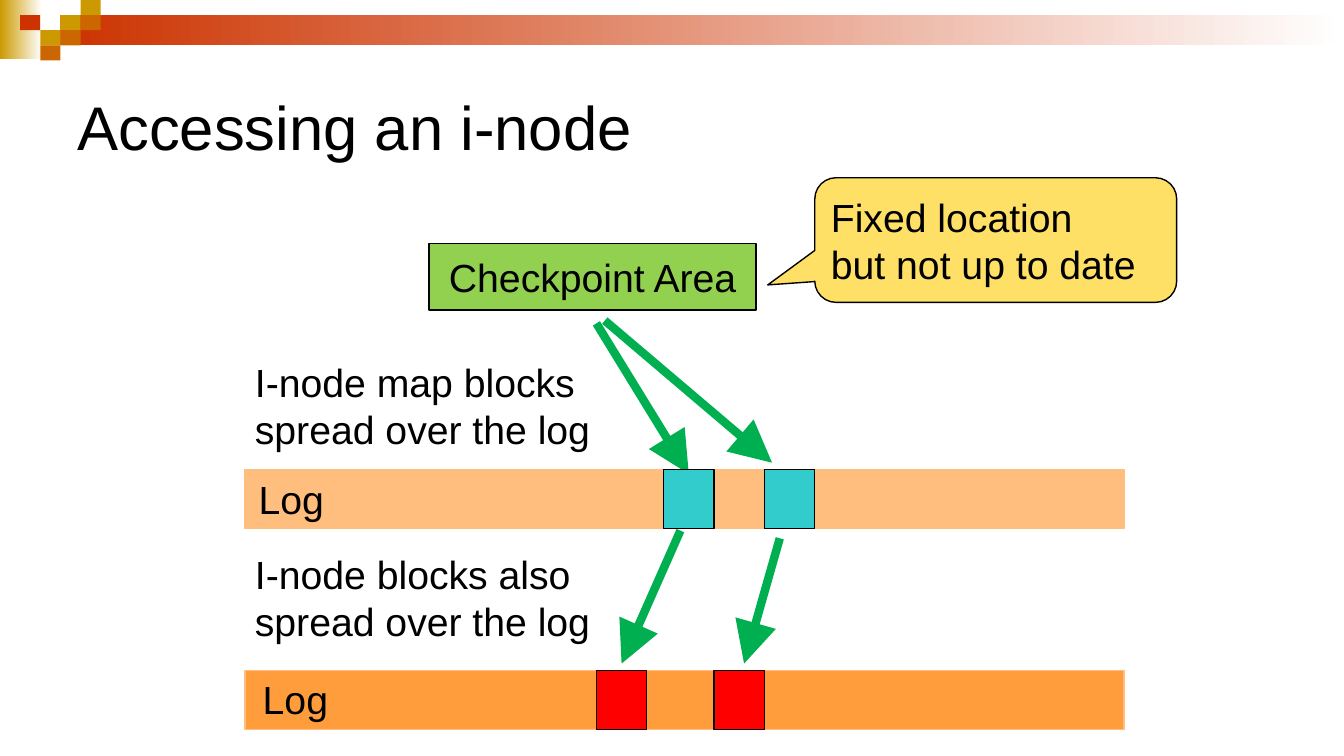
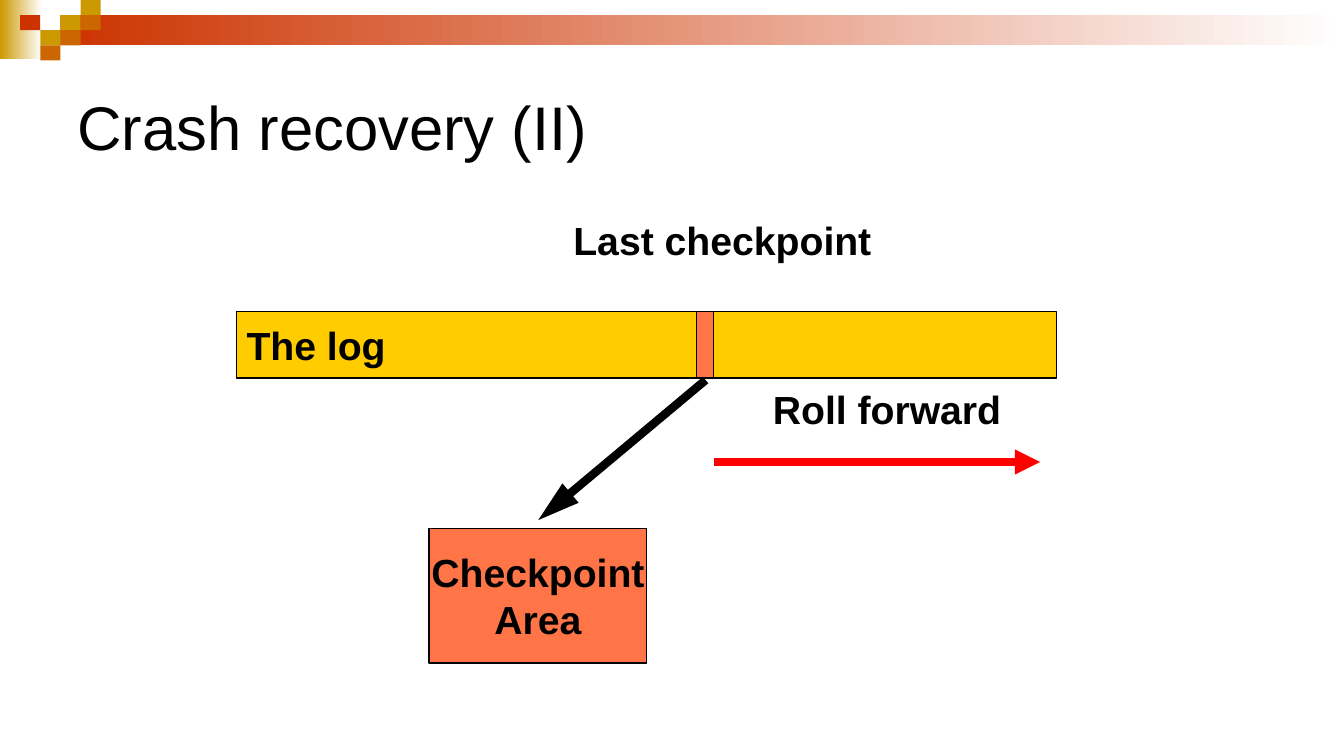
"""Build two slides on log-structured file systems."""
import dataclasses
import typing

import lxml.etree
import pptx
import pptx.dml.color
import pptx.dml.fill
import pptx.enum.shapes
import pptx.enum.text
import pptx.oxml.ns
import pptx.presentation
import pptx.shapes.autoshape
import pptx.slide
import pptx.text.text
import pptx.util

Pt = pptx.util.Pt
Kind = pptx.enum.shapes.MSO_SHAPE
Align = pptx.enum.text.PP_ALIGN
qn = pptx.oxml.ns.qn

FONT = "Arial"
HUES = {
    "black": "000000", "white": "FFFFFF", "gold": "CC9900", "rust": "CC3300",
    "brown": "CC6600", "cream": "FFE066", "peach": "FFBE7D", "orange": "FF9D3C",
    "red": "FF0000", "green": "00B050", "lime": "92D050", "teal": "33CCCC",
    "amber": "FFCC00", "coral": "FF7547",
}
CELL_W, CELL_H = 14.4, 10.8
BAR_X, BAR_W, BAR_H = 175, 628, 42
MAP_Y, NODE_Y = 335.5, 479
SIDE = 36


@dataclasses.dataclass(frozen=True)
class Box:
    """A shape or, without a fill, a text box."""
    x: float
    y: float
    w: float
    h: float
    text: str = ""
    fill: str = ""
    edge: str = "black"
    fade: str = ""
    bold: bool = False
    mid: bool = False
    kind: Kind = Kind.RECTANGLE
    bend: tuple[float, ...] = ()


@dataclasses.dataclass(frozen=True)
class Arrow:
    """A straight arrow with its head at the second point."""
    x1: float
    y1: float
    x2: float
    y2: float
    hue: str
    wide: str = "med"
    long: str = "med"


class Page(typing.NamedTuple):
    """A title and the items below it, from back to front."""
    title: str
    items: list[Box | Arrow]


def tint(name: str) -> pptx.dml.color.RGBColor:
    """Return the named colour."""
    return pptx.dml.color.RGBColor.from_string(HUES[name])


def write(frame: pptx.text.text.TextFrame, text: str, size: float,
          bold: bool = False, mid: bool = False) -> None:
    """Write paragraphs split at newlines and line breaks at vertical tabs."""
    frame.word_wrap = True
    frame.auto_size = pptx.enum.text.MSO_AUTO_SIZE.NONE
    frame.vertical_anchor = pptx.enum.text.MSO_ANCHOR.MIDDLE
    frame.margin_left = Pt(0 if mid else 7.2)
    frame.margin_right = Pt(0)
    for row, line in enumerate(text.split("\n")):
        para = frame.add_paragraph() if row else frame.paragraphs[0]
        para.alignment = Align.CENTER if mid else Align.LEFT
        for turn, words in enumerate(line.split("\v")):
            if turn:
                para.add_line_break()
            run = para.add_run()
            run.text = words
            run.font.name, run.font.size = FONT, Pt(size)
            run.font.bold = bold
            run.font.color.rgb = tint("black")


def paint(fill: pptx.dml.fill.FillFormat, hue: str, fade: str) -> None:
    """Fill with one colour or a left to right fade."""
    if not fade:
        fill.solid()
        fill.fore_color.rgb = tint(hue)
        return
    fill.gradient()
    fill.gradient_angle = 0
    for stop, name in zip(fill.gradient_stops, (hue, fade)):
        stop.color.rgb = tint(name)


def draw_box(slide: pptx.slide.Slide, box: Box) -> pptx.shapes.autoshape.Shape:
    """Draw one box with its text."""
    place = [Pt(v) for v in (box.x, box.y, box.w, box.h)]
    if box.fill:
        shape = slide.shapes.add_shape(box.kind, *place)
        shape.shadow.inherit = False
        paint(shape.fill, box.fill, box.fade)
        if box.edge:
            shape.line.color.rgb = tint(box.edge)
            shape.line.width = Pt(1)
        else:
            shape.line.fill.background()
        for spot, value in enumerate(box.bend):
            shape.adjustments[spot] = value
    else:
        shape = slide.shapes.add_textbox(*place)
    if box.text:
        write(shape.text_frame, box.text, 28, box.bold, box.mid)
    return shape


def draw_arrow(slide: pptx.slide.Slide, arrow: Arrow) -> None:
    """Draw one arrow."""
    ends = [Pt(v) for v in (arrow.x1, arrow.y1, arrow.x2, arrow.y2)]
    wire = slide.shapes.add_connector(
        pptx.enum.shapes.MSO_CONNECTOR.STRAIGHT, *ends)
    wire.line.color.rgb = tint(arrow.hue)
    wire.line.width = Pt(6)
    props = wire.element.spPr
    lxml.etree.SubElement(props.find(qn("a:ln")), qn("a:tailEnd"),
                          type="triangle", w=arrow.wide, len=arrow.long)
    lxml.etree.SubElement(props, qn("a:effectLst"))


def add_band(deck: pptx.presentation.Presentation,
             slide: pptx.slide.Slide) -> None:
    """Draw the top band and move it to the master."""
    cells = [(3, 1, "gold"), (4, 0, "gold"), (4, 1, "brown"), (2, 2, "gold"),
             (1, 1, "rust"), (3, 2, "brown"), (2, 3, "brown")]
    band = [
        Box(0, 0, 30, 42, fill="gold", edge="", fade="white"),
        Box(3 * CELL_W, CELL_H, 960 - 3 * CELL_W, 2 * CELL_H,
            fill="rust", edge="", fade="white"),
    ]
    band += [Box(col * CELL_W, row * CELL_H, CELL_W, CELL_H, fill=hue, edge="")
             for col, row, hue in cells]
    tree = deck.slide_master.shapes.element
    for count, box in enumerate(band, 100):
        node = draw_box(slide, box).element
        node.find(".//" + qn("p:cNvPr")).set("id", str(count))
        tree.append(node)


def add_page(slide: pptx.slide.Slide, page: Page) -> None:
    """Set the title and draw the items."""
    title = slide.shapes.title
    title.left, title.top = Pt(48), Pt(36)
    title.width, title.height = Pt(864), Pt(108)
    write(title.text_frame, page.title, 44)
    for item in page.items:
        if isinstance(item, Arrow):
            draw_arrow(slide, item)
        else:
            draw_box(slide, item)


def block(x: float, y: float, hue: str) -> Box:
    """Return a block in a log bar."""
    return Box(x, y, SIDE, BAR_H, fill=hue)


def link(x1: float, y1: float, x2: float, y2: float) -> Arrow:
    """Return a green pointer between blocks."""
    return Arrow(x1, y1, x2, y2, "green", "lg", "lg")


PAGES = [
    Page("Accessing an i-node", [
        Box(582, 127, 258.5, 89, "Fixed location\vbut not up to date", "cream",
            kind=Kind.ROUNDED_RECTANGULAR_CALLOUT, bend=(-0.63, 0.36, 0.17)),
        Box(BAR_X, MAP_Y, BAR_W, BAR_H, fill="peach", edge="peach"),
        Box(BAR_X, 252, 257, 75, "I-node map blocks\vspread over the log"),
        Box(BAR_X, NODE_Y, BAR_W, BAR_H, fill="orange", edge="peach"),
        Box(BAR_X, 389.5, 257, 75, "I-node blocks also\vspread over the log"),
        block(510, NODE_Y, "red"),
        block(426, NODE_Y, "red"),
        link(432, 229, 551.5, 330.5),
        link(426, 231, 492, 338.5),
        link(557, 384.5, 531.5, 474),
        block(546, MAP_Y, "teal"),
        link(486, 379, 444, 474),
        Box(177, MAP_Y, 62, 41, "Log", mid=True),
        Box(BAR_X, NODE_Y, 72, 41, "Log", mid=True),
        block(474, MAP_Y, "teal"),
        Box(306.5, 174, 233.5, 47.5, "Checkpoint Area", "lime", mid=True),
    ]),
    Page("Crash recovery (II)", [
        Box(169, 222.5, 585.5, 47.5, "The log", "amber", bold=True),
        Box(497.5, 222.5, 12, 47.5, fill="coral"),
        Box(306.5, 377.5, 155.5, 96, "Checkpoint\nArea", "coral",
            bold=True, mid=True),
        Arrow(504, 271.5, 384.5, 371.5, "black", long="lg"),
        Box(402.5, 150.5, 230.5, 41, "Last checkpoint", bold=True),
        Box(545, 271.5, 179.5, 41, "Roll forward", bold=True),
        Arrow(510, 330, 743, 330, "red"),
    ]),
]


def main() -> None:
    """Build and save the deck."""
    deck = pptx.Presentation()
    deck.slide_width, deck.slide_height = Pt(960), Pt(540)
    for count, page in enumerate(PAGES):
        slide = deck.slides.add_slide(deck.slide_layouts[5])
        if count == 0:
            add_band(deck, slide)
        add_page(slide, page)
    deck.save("out.pptx")


if __name__ == "__main__":
    main()
